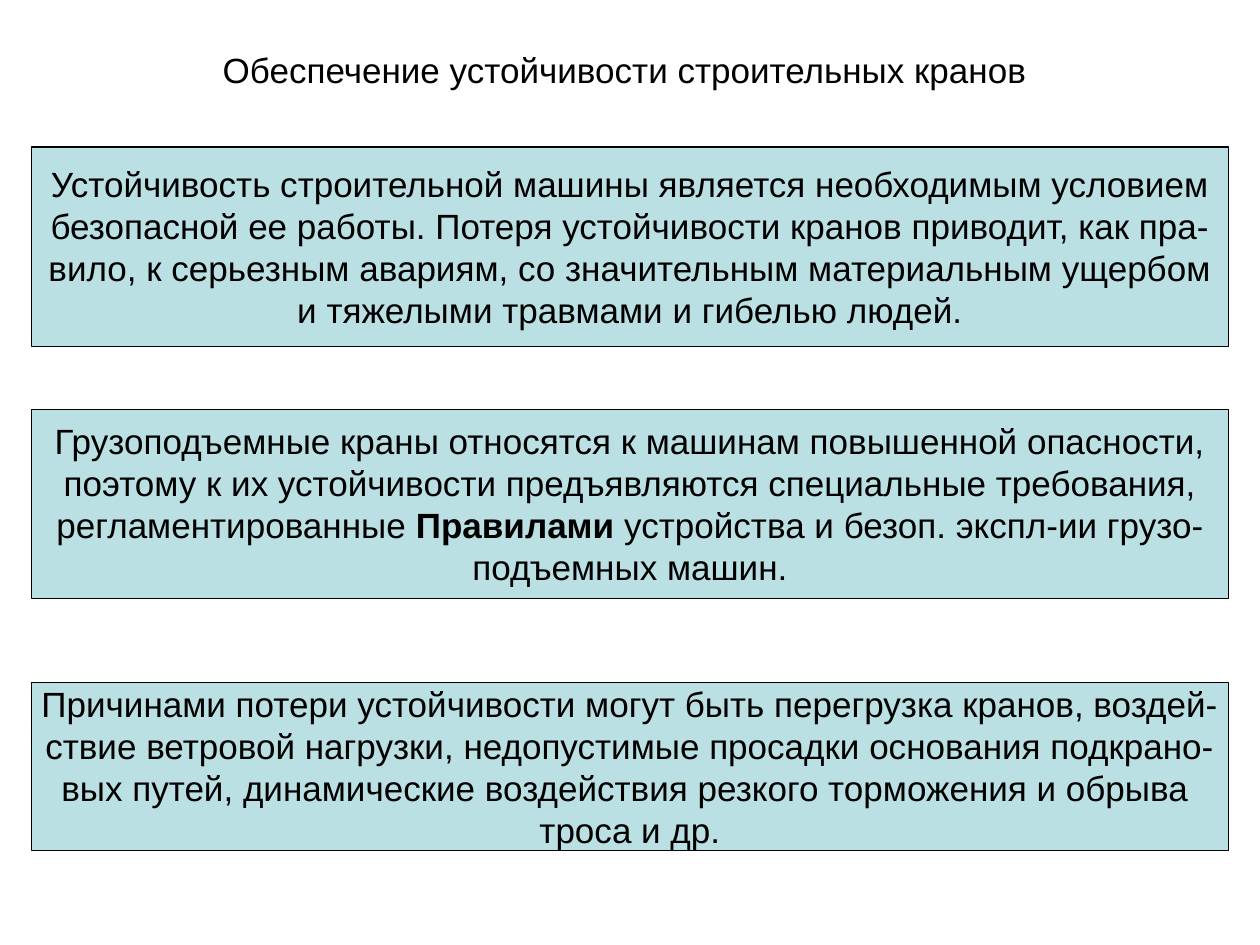
from dataclasses import dataclass

from pptx import Presentation
from pptx.dml.color import RGBColor
from pptx.enum.shapes import MSO_SHAPE
from pptx.enum.text import MSO_ANCHOR, MSO_AUTO_SIZE, PP_ALIGN
from pptx.slide import Slide
from pptx.text.text import TextFrame
from pptx.util import Emu, Pt

SCALE = 7620


@dataclass(frozen=True)
class Theme:
    """Colours, font and sizes of the slide."""
    ink: RGBColor = RGBColor(0, 0, 0)
    fill: RGBColor = RGBColor(0xBB, 0xE0, 0xE3)
    font: str = "Arial"
    size: Pt = Pt(20)
    line: Pt = Pt(0.75)


@dataclass(frozen=True)
class Run:
    """A piece of text in one weight."""
    text: str
    bold: bool = False


@dataclass(frozen=True)
class Panel:
    """A full-width box with its lines of text."""
    top: int
    height: int
    lines: list[list[Run]]


THEME = Theme()
LEFT, WIDTH = 30, 1140
TITLE = [[Run("Обеспечение устойчивости строительных кранов")]]
PANELS = [
    Panel(140, 190, [
        [Run("Устойчивость строительной машины является необходимым условием")],
        [Run("безопасной ее работы. Потеря устойчивости кранов приводит, как пра-")],
        [Run("вило, к серьезным авариям, со значительным материальным ущербом")],
        [Run("и тяжелыми травмами и гибелью людей.")],
    ]),
    Panel(390, 180, [
        [Run("Грузоподъемные краны относятся к машинам повышенной опасности,")],
        [Run("поэтому к их устойчивости предъявляются специальные требования,")],
        [Run("регламентированные "), Run("Правилами ", True),
         Run("устройства и безоп. экспл-ии грузо-")],
        [Run("подъемных машин.")],
    ]),
    Panel(650, 160, [
        [Run("Причинами потери устойчивости могут быть перегрузка кранов, воздей-")],
        [Run("ствие ветровой нагрузки, недопустимые просадки основания подкрано-")],
        [Run("вых путей, динамические воздействия резкого торможения и обрыва ")],
        [Run("троса и др.")],
    ]),
]


def px(num: int) -> Emu:
    """Turn whole px into EMU."""
    return Emu(num * SCALE)


def write(frame: TextFrame, lines: list[list[Run]], align: PP_ALIGN) -> None:
    """Fill a frame with one paragraph per line, run by run."""
    frame.word_wrap = False
    for num, line in enumerate(lines):
        para = frame.add_paragraph() if num else frame.paragraphs[0]
        para.alignment = align
        for part in line:
            run = para.add_run()
            run.text = part.text
            font = run.font
            font.name, font.size, font.bold = THEME.font, THEME.size, part.bold
            font.color.rgb = THEME.ink


def draw_title(slide: Slide) -> None:
    """Place and format the title."""
    title = slide.shapes.title
    title.left, title.top = px(200), px(40)
    title.width, title.height = px(791), px(52)
    frame = title.text_frame
    write(frame, TITLE, PP_ALIGN.LEFT)
    frame.vertical_anchor = MSO_ANCHOR.TOP
    frame.auto_size = MSO_AUTO_SIZE.SHAPE_TO_FIT_TEXT


def draw_panel(slide: Slide, panel: Panel) -> None:
    """Draw one filled box with centred text."""
    box = slide.shapes.add_shape(
        MSO_SHAPE.RECTANGLE, px(LEFT), px(panel.top), px(WIDTH), px(panel.height))
    box.shadow.inherit = False
    box.fill.solid()
    box.fill.fore_color.rgb = THEME.fill
    box.line.color.rgb = THEME.ink
    box.line.width = THEME.line
    box.text_frame.vertical_anchor = MSO_ANCHOR.MIDDLE
    write(box.text_frame, panel.lines, PP_ALIGN.CENTER)


def main() -> None:
    """Build and save the slide."""
    deck = Presentation()
    deck.slide_width, deck.slide_height = px(1200), px(900)
    slide = deck.slides.add_slide(deck.slide_layouts[5])
    draw_title(slide)
    for panel in PANELS:
        draw_panel(slide, panel)
    deck.save("out.pptx")


if __name__ == "__main__":
    main()
